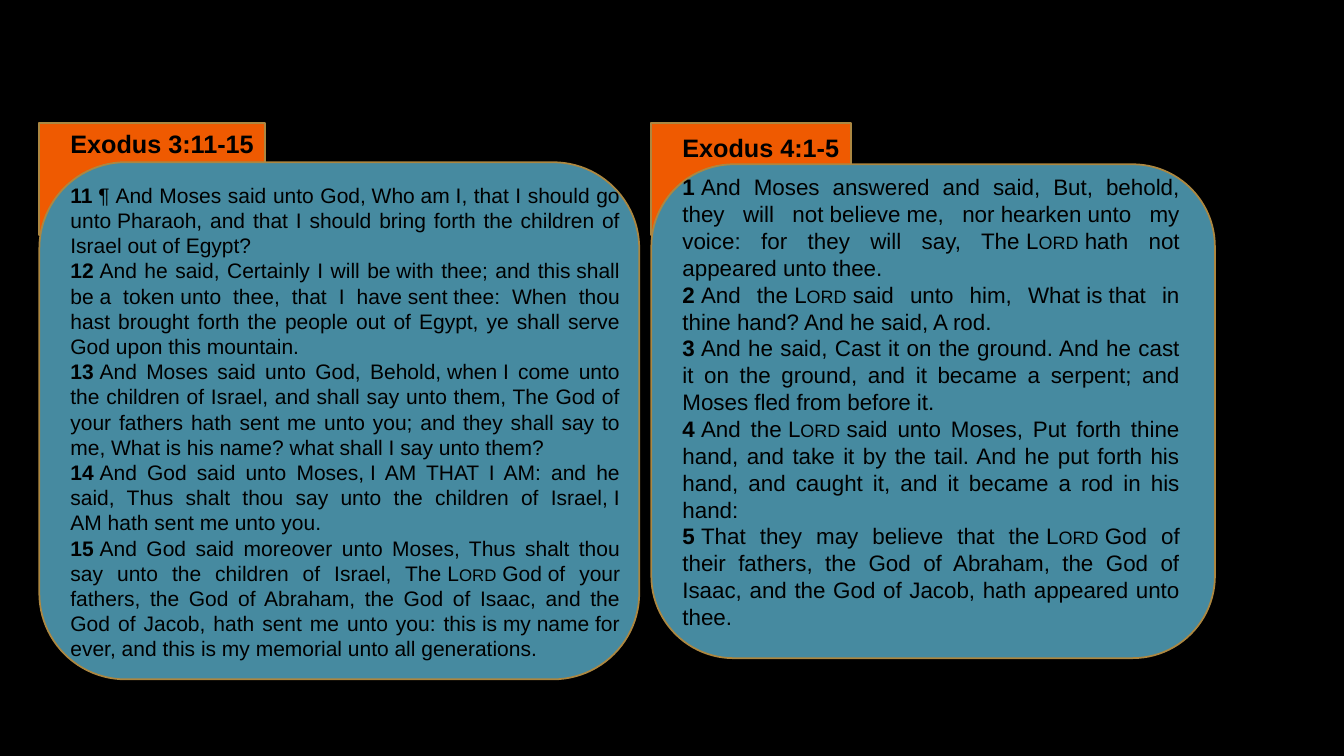
import pptx
import pptx.dml.color
import pptx.enum.shapes
import pptx.enum.text
import pptx.util

SHAPE = pptx.enum.shapes.MSO_SHAPE
ALIGN = pptx.enum.text.PP_ALIGN
INK, ORANGE, TEAL, GOLD = "000000", "EF5A01", "468AA0", "AC8741"
TAG_TOP, TAG_H, TEXT_INDENT = 1.22, 1.11, 0.21

# In the verses "~" stands for a non-breaking space.
EXODUS_3 = [
    "¶~And Moses said unto God,~Who~am~I, that I should go unto~Pharaoh, and that "
    "I should bring forth the children of Israel out of Egypt?",
    "And he said, Certainly I will be~with thee; and this~shall be~a token~unto thee, "
    "that I have~sent~thee: When thou hast brought forth the people out of Egypt, "
    "ye shall serve God upon this~mountain.",
    "And Moses said unto God, Behold,~when~I come unto the children of Israel, and "
    "shall say unto them, The God of your fathers hath sent me unto you; and they "
    "shall say to me, What~is his name?~what~shall I say unto them?",
    "And God said unto Moses,~I AM THAT I AM: and he said, Thus shalt thou say unto "
    "the children of Israel,~I AM~hath sent me unto you.",
    "And God said moreover unto Moses, Thus shalt thou say unto the children of "
    "Israel, The~Lord~God~of your fathers, the God of Abraham, the God of Isaac, and "
    "the God of Jacob, hath sent me unto you: this~is~my~name~for ever, and~this~is~my"
    "~memorial~unto all generations.",
]
EXODUS_4 = [
    "And Moses answered and said, But, behold, they will not~believe~me, nor~hearken"
    "~unto my voice: for they will say, The~Lord~hath not appeared unto thee.",
    "And the~Lord~said unto him, What~is~that in thine hand? And he said, A rod.",
    "And he said, Cast it on the ground. And he cast it on the ground, and it became "
    "a serpent; and Moses fled from before it.",
    "And the~Lord~said unto Moses, Put forth thine hand, and take it by the tail. And "
    "he put forth his hand, and caught it, and it became a rod in his hand:",
    "That they may believe that the~Lord~God of their fathers, the God of Abraham, "
    "the God of Isaac, and the God of Jacob, hath appeared unto thee.",
]


def rgb(color):
    return pptx.dml.color.RGBColor.from_string(color)


def inches(*lengths):
    return [pptx.util.Inches(n) for n in lengths]


def add_block(slide, kind, box, color):
    sp = slide.shapes.add_shape(kind, *inches(*box))
    sp.shadow.inherit = False
    sp.fill.solid()
    sp.fill.fore_color.rgb = rgb(color)
    sp.line.color.rgb = rgb(GOLD)
    sp.line.width = pptx.util.Pt(1.25)


def add_text_frame(slide, box, wrap):
    tf = slide.shapes.add_textbox(*inches(*box)).text_frame
    tf.word_wrap = wrap
    tf.auto_size = pptx.enum.text.MSO_AUTO_SIZE.SHAPE_TO_FIT_TEXT
    return tf


def add_run(p, text, size, bold=False, small_caps=False):
    r = p.add_run()
    r.text = text.replace("~", chr(160))
    r.font.name = "Arial"
    r.font.size = pptx.util.Pt(size)
    r.font.bold = bold
    r.font.color.rgb = rgb(INK)
    if small_caps:
        r.font._element.set("cap", "small")


def add_verses(slide, box, verses, first, size):
    """Numbers the verses from first and sets each "Lord" in small capitals."""
    tf = add_text_frame(slide, box, True)
    for i, verse in enumerate(verses):
        p = tf.add_paragraph() if i else tf.paragraphs[0]
        p.alignment = ALIGN.JUSTIFY
        add_run(p, f"{first + i}~", size, bold=True)
        before, lord, after = verse.partition("Lord")
        add_run(p, before, size)
        if lord:
            add_run(p, lord, size, small_caps=True)
            add_run(p, after, size)


def add_passage(slide, card, tag_w, heading, heading_box, body_box, verses, first, size):
    """Card is left, top, width, height; the other boxes are top, width, height."""
    left = card[0]
    text_left = left + TEXT_INDENT
    add_block(slide, SHAPE.RECTANGLE, (left, TAG_TOP, tag_w, TAG_H), ORANGE)
    add_block(slide, SHAPE.ROUNDED_RECTANGLE, card, TEAL)
    tf = add_text_frame(slide, (text_left, *heading_box), False)
    add_run(tf.paragraphs[0], heading, 18, bold=True)
    add_verses(slide, (text_left, *body_box), verses, first, size)


def main():
    prs = pptx.Presentation()
    prs.slide_width, prs.slide_height = inches(13.33, 7.5)
    slide = prs.slides.add_slide(prs.slide_layouts[6])
    slide.background.fill.solid()
    slide.background.fill.fore_color.rgb = rgb("000000")
    add_passage(slide, (0.39, 1.61, 5.95, 5.13), 2.24, "Exodus 3:11-15",
                (1.22, 2.04, 0.4), (1.76, 5.65, 4.9), EXODUS_3, 11, 15)
    add_passage(slide, (6.46, 1.63, 5.59, 4.9), 1.98, "Exodus 4:1-5",
                (1.26, 1.77, 0.4), (1.67, 5.13, 4.68), EXODUS_4, 1, 16)
    prs.save("out.pptx")


if __name__ == "__main__":
    main()
